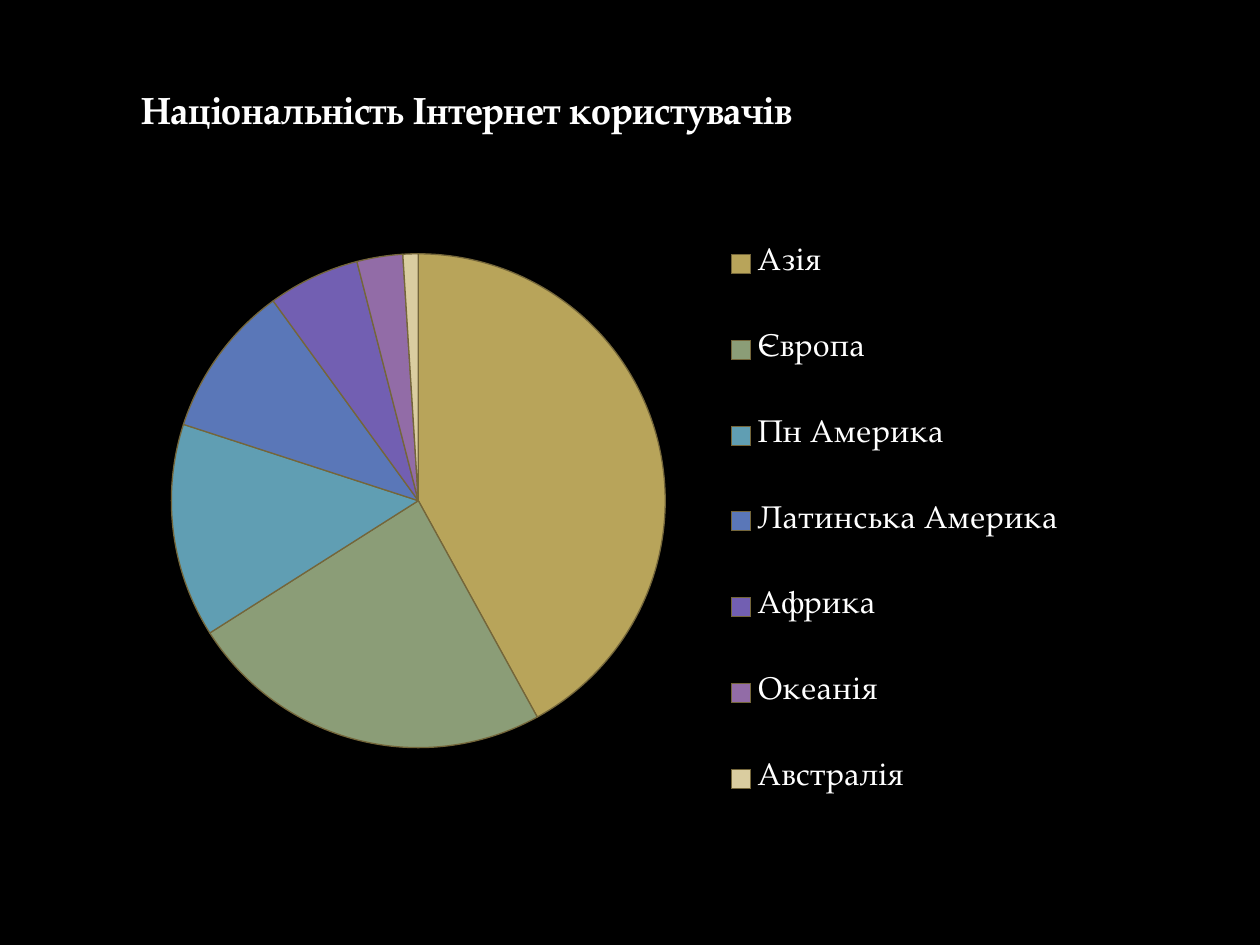
from lxml import etree
from pptx import Presentation
from pptx.chart.data import CategoryChartData
from pptx.dml.color import RGBColor
from pptx.enum.chart import XL_CHART_TYPE, XL_LEGEND_POSITION
from pptx.oxml import parse_xml
from pptx.oxml.ns import nsdecls, qn
from pptx.util import Inches, Pt

FONT = "TeX Gyre Pagella"
HEADING = "Національність Інтернет користувачів"
CHART_WIDTH, CHART_HEIGHT = Inches(8.58), Inches(6.38)
COLORS = {
    "background": "000000",
    "text": "FFFFFF",
    "outline": "74663A",
    "Азія": "B8A45A",
    "Європа": "8B9D77",
    "Пн Америка": "609EB3",
    "Латинська Америка": "5A77B8",
    "Африка": "725FB2",
    "Океанія": "926CA7",
    "Австралія": "DACDA0",
}
USER_SHARES = {
    "Азія": 42,
    "Європа": 24,
    "Пн Америка": 14,
    "Латинська Америка": 10,
    "Африка": 6,
    "Океанія": 3,
    "Австралія": 1,
}


def rgb(name):
    return RGBColor.from_string(COLORS[name])


def style_font(font, size, bold=False):
    font.name = FONT
    font.size = Pt(size)
    font.bold = bold
    font.color.rgb = rgb("text")


def manual_layout(left, top, width=None, height=None, inner=False):
    """Return a c:layout element for lengths measured inside the chart."""
    layout = parse_xml(f"<c:layout {nsdecls('c')}><c:manualLayout/></c:layout>")
    settings = {"layoutTarget": "inner" if inner else None,
                "xMode": "edge", "yMode": "edge",
                "x": left / CHART_WIDTH, "y": top / CHART_HEIGHT,
                "w": width and width / CHART_WIDTH,
                "h": height and height / CHART_HEIGHT}
    for tag, value in settings.items():
        if value is not None:
            etree.SubElement(layout[0], qn(f"c:{tag}")).set("val", str(value))
    return layout


def place(element, layout, after=None):
    """Put the layout into a chart part, replacing any automatic one."""
    for automatic in element.findall(qn("c:layout")):
        element.remove(automatic)
    if after is None:
        element.insert(0, layout)
    else:
        element.find(qn(after)).addnext(layout)


def add_heading(chart):
    chart.has_title = True
    title = chart.chart_title
    title.include_in_layout = False
    run = title.text_frame.paragraphs[0].add_run()
    run.text = HEADING
    style_font(run.font, 21.6, bold=True)
    place(title._element, manual_layout(Inches(0.4), Inches(0.16)),
          after="c:tx")


def add_legend(chart):
    chart.has_legend = True
    legend = chart.legend
    legend.position = XL_LEGEND_POSITION.RIGHT
    legend.include_in_layout = False
    style_font(legend.font, 18)
    place(legend._element,
          manual_layout(Inches(5.06), Inches(1.02), Inches(2.75), Inches(5.2)),
          after="c:legendPos")


def color_slices(plot):
    plot.vary_by_categories = True
    for index, region in enumerate(USER_SHARES):
        part = plot.series[0].points[index].format
        part.fill.solid()
        part.fill.fore_color.rgb = rgb(region)
        part.line.color.rgb = rgb("outline")
        part.line.width = Pt(0.75)


def add_user_pie(slide):
    shares = CategoryChartData()
    shares.categories = list(USER_SHARES)
    shares.add_series(HEADING, list(USER_SHARES.values()))
    chart = slide.shapes.add_chart(
        XL_CHART_TYPE.PIE, Inches(0.67), Inches(0.52),
        CHART_WIDTH, CHART_HEIGHT, shares).chart
    style_font(chart.font, 18)
    add_heading(chart)
    add_legend(chart)
    color_slices(chart.plots[0])
    plot_area = chart._chartSpace.chart.plotArea
    place(plot_area, manual_layout(Inches(0.69), Inches(1.49), Inches(3.92),
                                   Inches(3.93), inner=True))


def main():
    deck = Presentation()
    deck.slide_width, deck.slide_height = Inches(10), Inches(7.5)
    slide = deck.slides.add_slide(deck.slide_layouts[6])
    slide.background.fill.solid()
    slide.background.fill.fore_color.rgb = rgb("background")
    add_user_pie(slide)
    deck.save("out.pptx")


if __name__ == "__main__":
    main()
